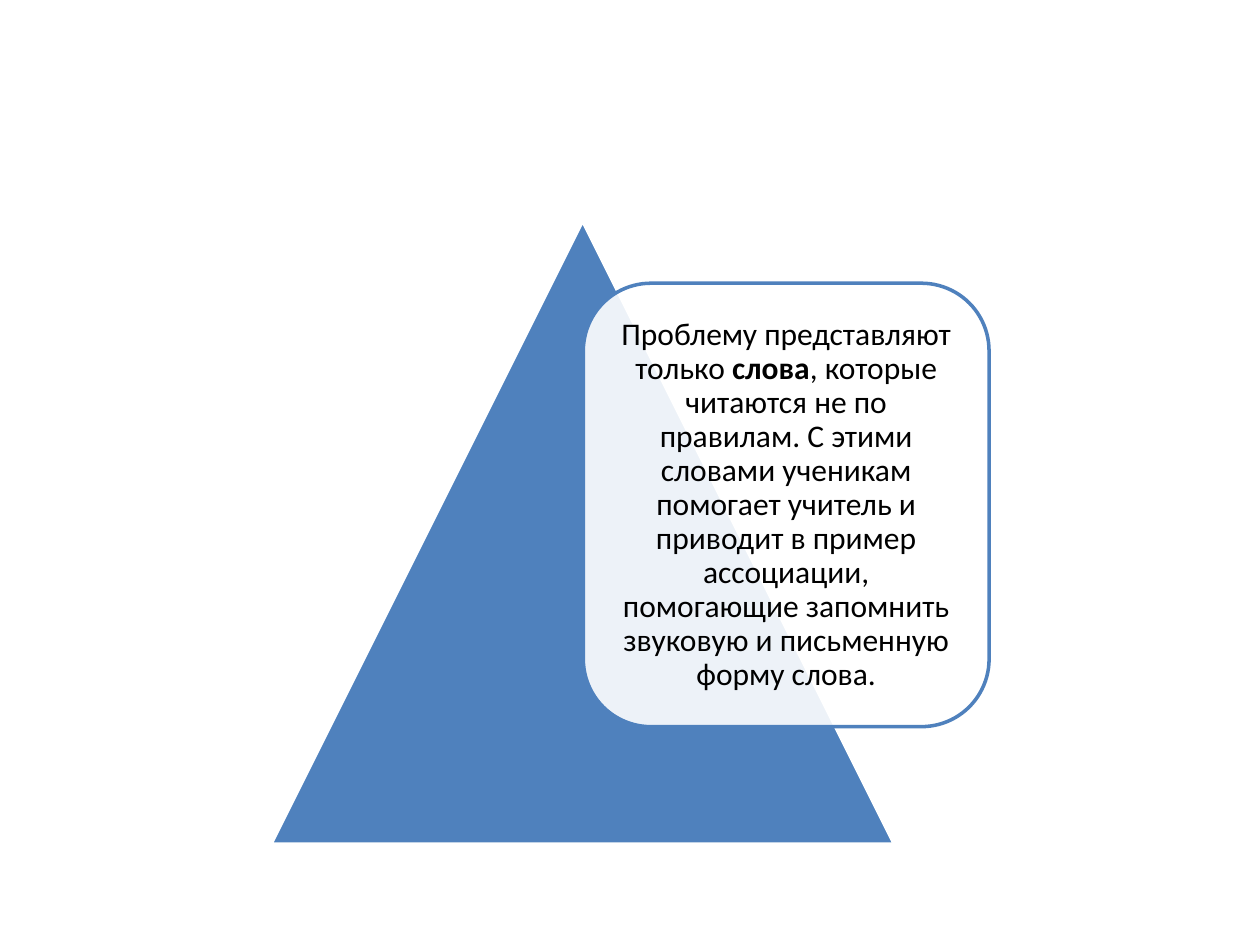
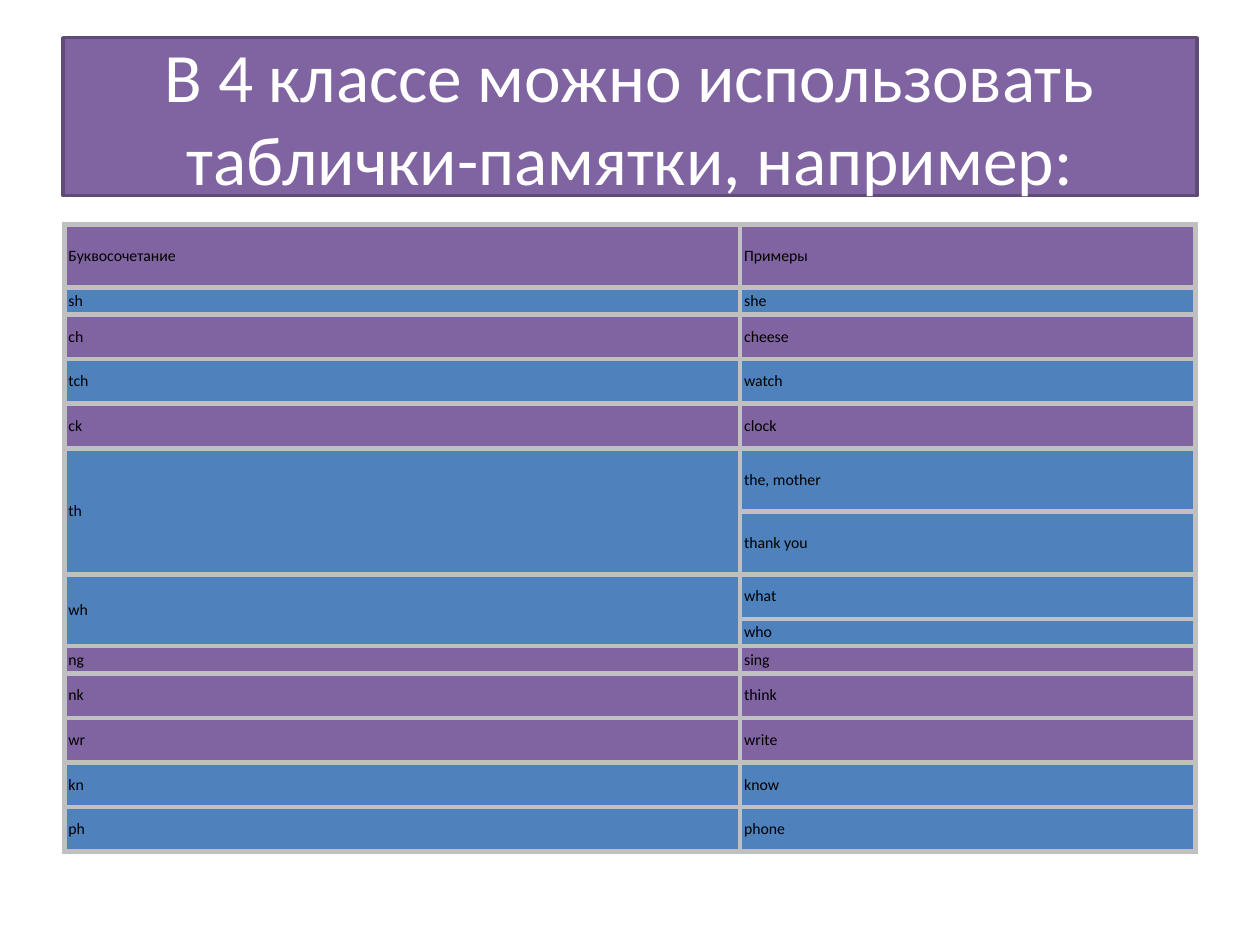
from lxml.etree import SubElement
from pptx import Presentation
from pptx.dml.color import RGBColor
from pptx.enum.shapes import MSO_SHAPE
from pptx.enum.text import MSO_ANCHOR, MSO_AUTO_SIZE, PP_ALIGN
from pptx.oxml import parse_xml
from pptx.oxml.ns import nsdecls, qn
from pptx.util import Cm, Pt

BLUE = RGBColor(0x4F, 0x81, 0xBD)
PURPLE = RGBColor(0x80, 0x64, 0xA2)
DARK_PURPLE = RGBColor(0x5F, 0x4A, 0x78)
SILVER = RGBColor(0xC0, 0xC0, 0xC0)
WHITE = RGBColor(0xFF, 0xFF, 0xFF)
BLACK = RGBColor(0, 0, 0)

FONT = "Calibri"
TITLE_ONLY, BLANK = 5, 6
TALL, MEDIUM, SHORT = 1.27, 0.9, 0.54

PROBLEM_WORDS = [
    ("Проблему представляют только ", False),
    ("слова", True),
    (", которые читаются не по правилам. С этими словами ученикам помогает "
     "учитель и приводит в пример ассоциации, помогающие запомнить звуковую "
     "и письменную форму слова.", False),
]

LETTER_GROUPS = [
    ("Буквосочетание", PURPLE, [("Примеры", TALL)]),
    ("sh", BLUE, [("she", SHORT)]),
    ("ch", PURPLE, [("cheese", MEDIUM)]),
    ("tch", BLUE, [("watch", MEDIUM)]),
    ("ck", PURPLE, [("clock", MEDIUM)]),
    ("th", BLUE, [("the, mother", TALL), ("thank you", TALL)]),
    ("wh", BLUE, [("what", MEDIUM), ("who", SHORT)]),
    ("ng", PURPLE, [("sing", SHORT)]),
    ("nk", PURPLE, [("think", MEDIUM)]),
    ("wr", PURPLE, [("write", MEDIUM)]),
    ("kn", BLUE, [("know", MEDIUM)]),
    ("ph", BLUE, [("phone", MEDIUM)]),
]


def write_text(text_frame, runs, size, color=BLACK, align=PP_ALIGN.CENTER, line_spacing=None):
    paragraph = text_frame.paragraphs[0]
    paragraph.alignment = align
    paragraph.line_spacing = line_spacing
    for text, bold in runs:
        run = paragraph.add_run()
        run.text = text
        run.font.name = FONT
        run.font.size = Pt(size)
        run.font.bold = bold
        run.font.color.rgb = color


class Deck:
    def __init__(self):
        self.presentation = Presentation()
        self.presentation.slide_width = Cm(25.4)
        self.presentation.slide_height = Cm(19.05)
        self.slide = None

    def new_slide(self, layout):
        self.slide = self.presentation.slides.add_slide(self.presentation.slide_layouts[layout])

    def paint(self, shape, fill, line):
        shape.fill.solid()
        shape.fill.fore_color.rgb = fill
        shape.line.color.rgb = line
        shape.line.width = Pt(2)

    def shape(self, kind, left, top, width, height, fill, line, opacity=None):
        shape = self.slide.shapes.add_shape(kind, Cm(left), Cm(top), Cm(width), Cm(height))
        shape.shadow.inherit = False
        self.paint(shape, fill, line)
        if opacity is not None:
            color = shape.fill._xPr.find(qn("a:solidFill"))[0]
            SubElement(color, qn("a:alpha"), val=str(opacity * 1000))
        return shape

    def card(self, runs, left, top, width, height):
        card = self.shape(MSO_SHAPE.ROUNDED_RECTANGLE, left, top, width, height,
                          fill=WHITE, line=BLUE, opacity=90)
        frame = card.text_frame
        frame.word_wrap = True
        frame.vertical_anchor = MSO_ANCHOR.MIDDLE
        frame.margin_left = frame.margin_right = Cm(0.19)
        frame.margin_top = frame.margin_bottom = Cm(0.19)
        write_text(frame, runs, size=18, line_spacing=0.9)

    def title(self, text):
        title = self.slide.shapes.title
        title.left, title.top, title.width, title.height = Cm(1.27), Cm(0.76), Cm(22.86), Cm(3.18)
        self.paint(title, PURPLE, DARK_PURPLE)
        title.text_frame.auto_size = MSO_AUTO_SIZE.NONE
        title.text_frame.vertical_anchor = MSO_ANCHOR.MIDDLE
        write_text(title.text_frame, [(text, False)], size=39.6, color=WHITE)

    def cell(self, cell, text, fill, margin_right):
        cell.margin_left = cell.margin_top = cell.margin_bottom = Cm(0.08)
        cell.margin_right = Cm(margin_right)
        cell.vertical_anchor = MSO_ANCHOR.MIDDLE
        cell.fill.solid()
        cell.fill.fore_color.rgb = fill
        if text:
            write_text(cell.text_frame, [(text, False)], size=9, align=PP_ALIGN.JUSTIFY)
        properties = cell._tc.get_or_add_tcPr()
        for position, side in enumerate(("lnL", "lnR", "lnT", "lnB")):
            properties.insert(position, parse_xml(
                f'<a:{side} {nsdecls("a")} w="{Pt(3)}"><a:solidFill>'
                f'<a:srgbClr val="{SILVER}"/></a:solidFill></a:{side}>'))

    def table(self, groups, left, top, column_widths):
        heights = [height for _, _, examples in groups for _, height in examples]
        table = self.slide.shapes.add_table(
            len(heights), len(column_widths), Cm(left), Cm(top),
            Cm(sum(column_widths)), Cm(sum(heights))).table
        for column, width in zip(table.columns, column_widths):
            column.width = Cm(width)
        for row, height in zip(table.rows, heights):
            row.height = Cm(height)
        first = 0
        for letters, fill, examples in groups:
            for offset, (example, _) in enumerate(examples):
                row = first + offset
                self.cell(table.cell(row, 0), "" if offset else letters, fill, margin_right=0.13)
                self.cell(table.cell(row, 1), example, fill, margin_right=0.08)
            if len(examples) > 1:
                table.cell(first, 0).merge(table.cell(row, 0))
            first += len(examples)


def main():
    deck = Deck()

    deck.new_slide(BLANK)
    deck.shape(MSO_SHAPE.ISOSCELES_TRIANGLE, 5.46, 4.45, 12.57, 12.57, fill=BLUE, line=WHITE)
    deck.card(PROBLEM_WORDS, 11.76, 5.71, 8.18, 8.94)

    deck.new_slide(TITLE_ONLY)
    deck.title("В 4 классе можно использовать таблички-памятки, например:")
    deck.table(LETTER_GROUPS, 1.3, 4.52, column_widths=(13.62, 9.18))

    deck.presentation.save("out.pptx")


if __name__ == "__main__":
    main()
